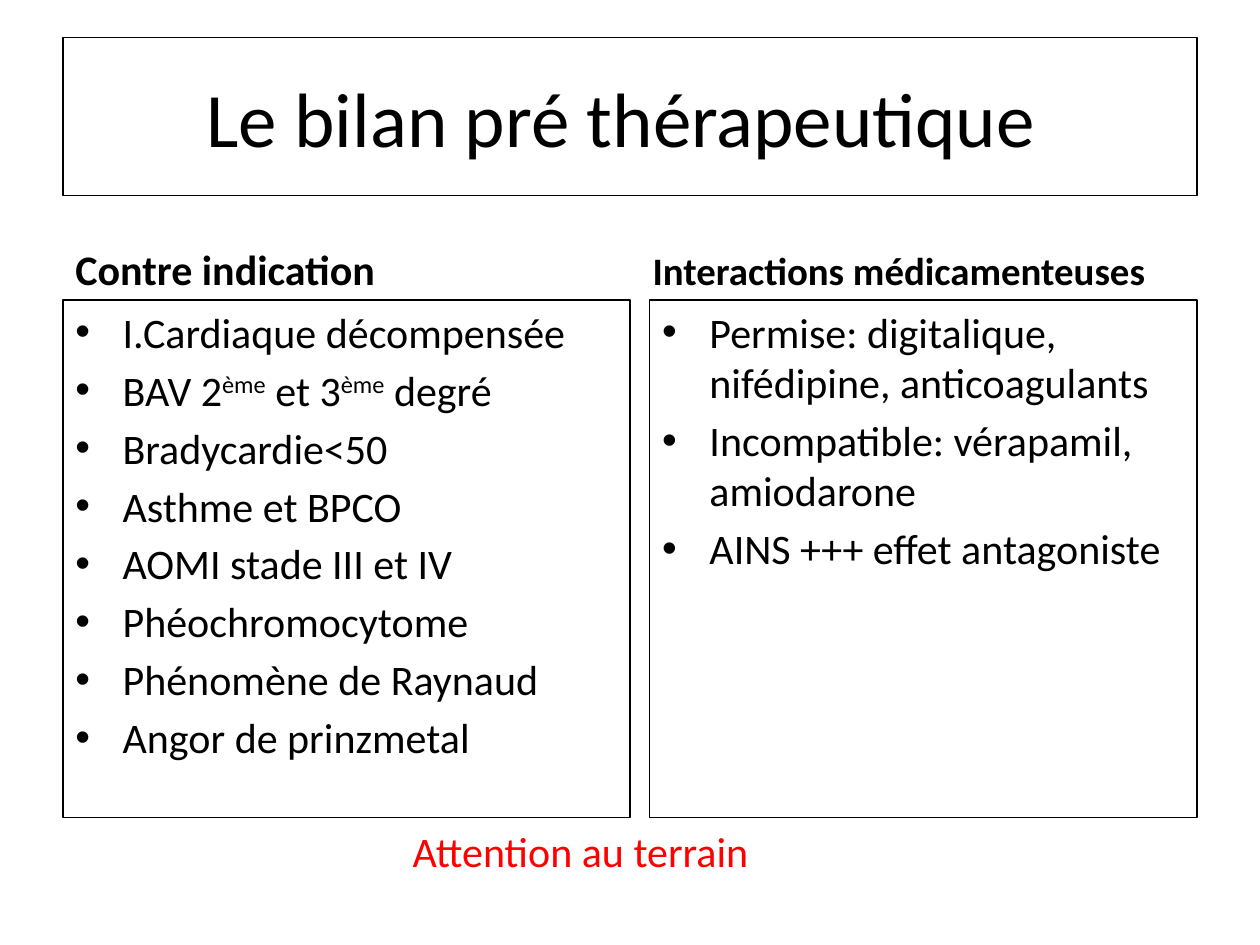
from dataclasses import dataclass

from lxml import etree
from pptx import Presentation
from pptx.dml.color import RGBColor
from pptx.enum.shapes import MSO_SHAPE
from pptx.enum.text import MSO_ANCHOR, MSO_AUTO_SIZE, PP_ALIGN
from pptx.oxml.ns import qn
from pptx.util import Pt

RECT = MSO_SHAPE.RECTANGLE
TOP, MIDDLE, BOTTOM = MSO_ANCHOR.TOP, MSO_ANCHOR.MIDDLE, MSO_ANCHOR.BOTTOM
LEFT, CENTER = PP_ALIGN.LEFT, PP_ALIGN.CENTER
NO_AUTOFIT = MSO_AUTO_SIZE.NONE


@dataclass(frozen=True)
class Theme:
    font: str = "Calibri"
    ink: RGBColor = RGBColor(0, 0, 0)
    alert: RGBColor = RGBColor(255, 0, 0)
    title: float = 44
    body: float = 24
    small_heading: float = 22.2
    line: float = 0.75
    indent: float = 27
    space_before: float = 4.3


def add_run(p, text, *, font, size, color, bold=False, superscript=False):
    r = p.add_run()
    r.text = text
    r.font.name = font
    r.font.size = Pt(size)
    r.font.color.rgb = color
    r.font.bold = bold
    if superscript:
        r._r.get_or_add_rPr().set("baseline", "30000")


class SlideBuilder:
    def __init__(self, prs, theme):
        self.theme = theme
        self.s = prs.slides.add_slide(prs.slide_layouts[5])

    def fill_paragraph(self, p, text, *, size=None, color=None, bold=False, align=LEFT):
        """Fill a paragraph; parts between ^ marks are superscript."""
        t = self.theme
        p.alignment = align
        for i, part in enumerate(text.split("^")):
            add_run(p, part, font=t.font, size=size or t.body,
                    color=color or t.ink, bold=bold, superscript=i % 2 == 1)

    def frame(self, sp, anchor):
        tf = sp.text_frame
        tf.word_wrap = True
        tf.auto_size = NO_AUTOFIT
        tf.vertical_anchor = anchor
        return tf

    def outline(self, sp):
        sp.line.color.rgb = self.theme.ink
        sp.line.width = Pt(self.theme.line)

    def title(self, text, x, y, w, h):
        sp = self.s.shapes.title
        sp.left, sp.top, sp.width, sp.height = Pt(x), Pt(y), Pt(w), Pt(h)
        self.outline(sp)
        p = self.frame(sp, MIDDLE).paragraphs[0]
        self.fill_paragraph(p, text, size=self.theme.title, align=CENTER)

    def label(self, text, x, y, w, h, anchor=TOP, **style):
        sp = self.s.shapes.add_textbox(Pt(x), Pt(y), Pt(w), Pt(h))
        self.fill_paragraph(self.frame(sp, anchor).paragraphs[0], text, **style)

    def bullet_box(self, items, x, y, w, h):
        t = self.theme
        sp = self.s.shapes.add_shape(RECT, Pt(x), Pt(y), Pt(w), Pt(h))
        sp.shadow.inherit = False
        sp.fill.background()
        self.outline(sp)
        tf = self.frame(sp, TOP)
        for i, item in enumerate(items):
            p = tf.add_paragraph() if i else tf.paragraphs[0]
            self.fill_paragraph(p, item)
            p.space_before = Pt(t.space_before)
            pPr = p._p.get_or_add_pPr()
            pPr.set("marL", str(Pt(t.indent)))
            pPr.set("indent", str(-Pt(t.indent)))
            etree.SubElement(pPr, qn("a:buFont")).set("typeface", "Arial")
            etree.SubElement(pPr, qn("a:buChar")).set("char", "•")


def main():
    theme = Theme()
    prs = Presentation()
    prs.slide_width, prs.slide_height = Pt(720), Pt(540)
    slide = SlideBuilder(prs, theme)

    slide.title("Le bilan pré thérapeutique ", 36, 21.6, 648, 90)

    heading_y, heading_w, heading_h = 121, 318.2, 50.4
    box_y, box_h = heading_y + heading_h, 295.9
    columns = [
        ("Contre indication", theme.body, 36, 36, 324,
         ["I.Cardiaque décompensée", "BAV 2^ème^ et 3^ème^ degré",
          "Bradycardie<50", "Asthme et BPCO", "AOMI stade III et IV",
          "Phéochromocytome", "Phénomène de Raynaud", "Angor de prinzmetal"]),
        ("Interactions médicamenteuses", theme.small_heading, 365.8, 371.3, 312.7,
         ["Permise: digitalique, nifédipine, anticoagulants",
          "Incompatible: vérapamil, amiodarone",
          "AINS +++ effet antagoniste"]),
    ]
    for heading, size, heading_x, box_x, box_w, items in columns:
        slide.label(heading, heading_x, heading_y, heading_w, heading_h,
                    anchor=BOTTOM, size=size, bold=True)
        slide.bullet_box(items, box_x, box_y, box_w, box_h)

    slide.label("Attention au terrain", 156, 468, 351.5, 36,
                color=theme.alert, align=CENTER)
    prs.save("out.pptx")


if __name__ == "__main__":
    main()
